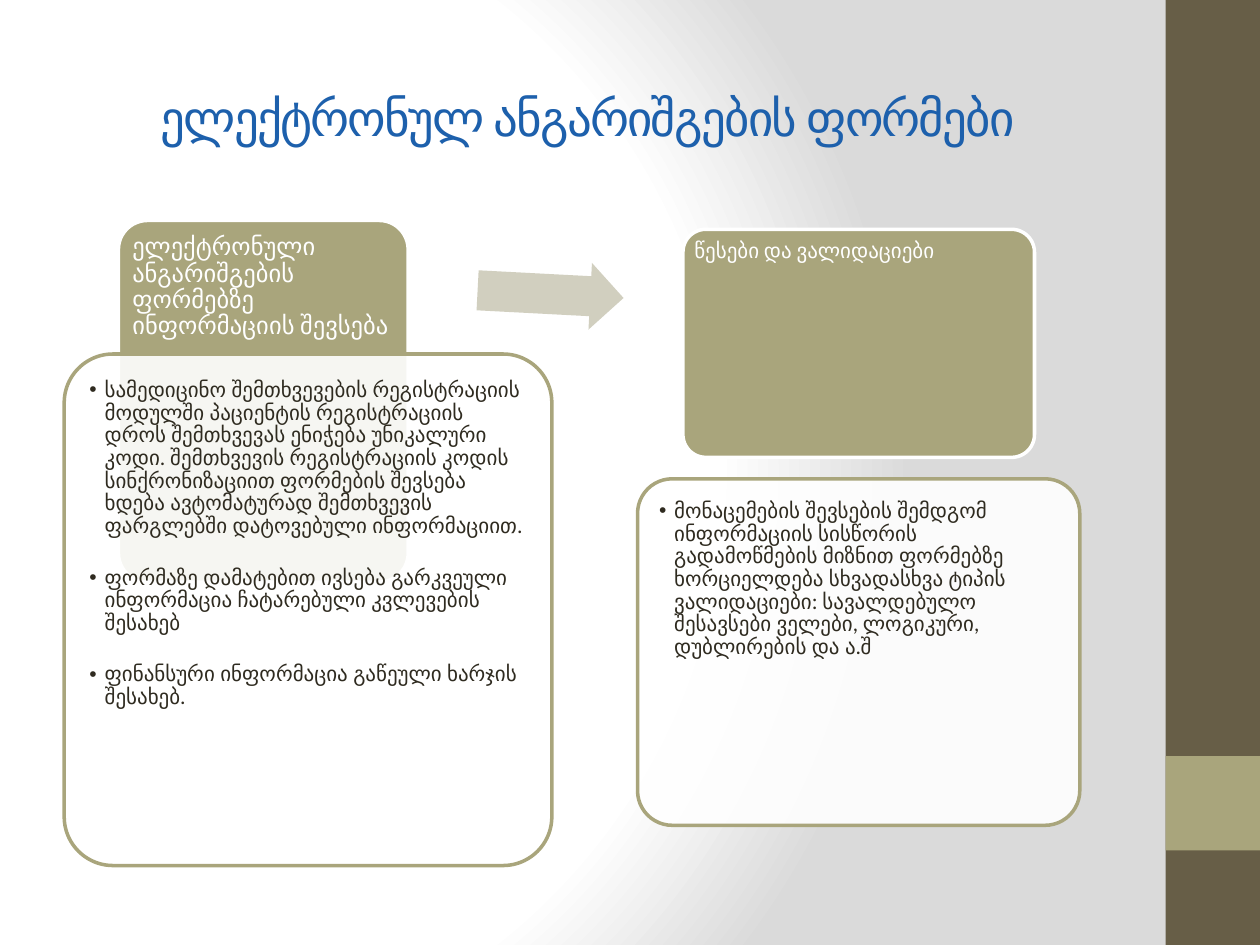
from pptx import Presentation
from pptx.dml.color import RGBColor
from pptx.enum.shapes import MSO_SHAPE
from pptx.enum.text import MSO_ANCHOR, MSO_AUTO_SIZE, PP_ALIGN
from pptx.oxml import parse_xml
from pptx.oxml.ns import nsdecls, qn
from pptx.util import Inches, Pt

RECT = MSO_SHAPE.RECTANGLE
ROUND = MSO_SHAPE.ROUNDED_RECTANGLE
ARROW = MSO_SHAPE.RIGHT_ARROW
TOP, MID = MSO_ANCHOR.TOP, MSO_ANCHOR.MIDDLE
LEFT, CENTER = PP_ALIGN.LEFT, PP_ALIGN.CENTER
NO_FIT = MSO_AUTO_SIZE.NONE

HUES = {
    "white": "FFFFFF", "grey": "DADADA", "brown": "675E47", "olive": "A9A57C",
    "pale": "D1CFBF", "blue": "1D60AC", "ink": "2F2B20",
}

LEFT_LIST = [
    "სამედიცინო შემთხვევების რეგისტრაციის მოდულში პაციენტის რეგისტრაციის დროს "
    "შემთხვევას ენიჭება უნიკალური კოდი. შემთხვევის რეგისტრაციის კოდის "
    "სინქრონიზაციით ფორმების შევსება ხდება ავტომატურად შემთხვევის ფარგლებში "
    "დატოვებული ინფორმაციით.",
    "ფორმაზე დამატებით ივსება გარკვეული ინფორმაცია ჩატარებული კვლევების შესახებ",
    "ფინანსური ინფორმაცია გაწეული ხარჯის შესახებ.",
]
RIGHT_LIST = [
    "მონაცემების შევსების შემდგომ ინფორმაციის სისწორის გადამოწმების მიზნით "
    "ფორმებზე ხორციელდება სხვადასხვა ტიპის ვალიდაციები: სავალდებულო შესავსები "
    "ველები, ლოგიკური, დუბლირების და ა.შ",
]


def rgb(name):
    return RGBColor.from_string(HUES[name])


def paint(slide):
    slide.background.fill.gradient()
    old = slide.element.find(".//" + qn("a:gradFill"))
    stops = "".join(
        f'<a:gs pos="{pos * 1000}"><a:srgbClr val="{HUES[hue]}"/></a:gs>'
        for pos, hue in ((0, "white"), (75, "white"), (100, "grey"))
    )
    new = parse_xml(
        f'<a:gradFill {nsdecls("a")} rotWithShape="1"><a:gsLst>{stops}</a:gsLst>'
        '<a:path path="circle">'
        '<a:fillToRect l="20000" t="50000" r="100000" b="50000"/>'
        "</a:path></a:gradFill>"
    )
    old.getparent().replace(old, new)


def place(item, box):
    item.left, item.top, item.width, item.height = map(Inches, box)


def add_box(slide, kind, box, fill, line=None, adj=(), alpha=None, turn=0):
    shape = slide.shapes.add_shape(kind, *map(Inches, box))
    shape.shadow.inherit = False
    shape.rotation = turn
    shape.fill.solid()
    shape.fill.fore_color.rgb = rgb(fill)
    if alpha:
        hue = shape.element.spPr.find(".//" + qn("a:srgbClr"))
        hue.append(parse_xml(f'<a:alpha {nsdecls("a")} val="{alpha * 1000}"/>'))
    if line:
        shape.line.color.rgb = rgb(line)
        shape.line.width = Pt(2)
    else:
        shape.line.fill.background()
    for i, value in enumerate(adj):
        shape.adjustments[i] = value


def set_text(item, texts, size, font, hue, align=LEFT, anchor=TOP,
             pads=(0.09, 0.09, 0.09, 0.09), lead=0.9, gap=0, track=0, dots=False):
    frame = item.text_frame
    frame.word_wrap = True
    frame.auto_size = NO_FIT
    frame.vertical_anchor = anchor
    (frame.margin_left, frame.margin_top,
     frame.margin_right, frame.margin_bottom) = map(Inches, pads)
    for i, text in enumerate(texts):
        para = frame.paragraphs[0] if i == 0 else frame.add_paragraph()
        para.alignment = align
        para.line_spacing = lead
        para.space_before = Pt(0)
        para.space_after = Pt(gap)
        if dots:
            props = para._p.get_or_add_pPr()
            props.set("marL", str(Inches(0.12)))
            props.set("indent", str(-Inches(0.12)))
            props.append(parse_xml(f'<a:buChar {nsdecls("a")} char="•"/>'))
        run = para.add_run()
        run.text = text
        run.font.size = Pt(size)
        run.font.name = font
        run.font.color.rgb = rgb(hue)
        if track:
            run._r.get_or_add_rPr().set("spc", str(track * 100))


def add_head(slide, box, high, text, size, pads):
    add_box(slide, ROUND, box, "olive", line="white", adj=[0.1])
    label = slide.shapes.add_textbox(*map(Inches, (*box[:3], high)))
    set_text(label, [text], size, "Calibri", "white", pads=pads)


def add_list(slide, body, box, inset, texts):
    add_box(slide, ROUND, box, "white", line="olive", adj=[0.1], alpha=90)
    x, y, w, h = box
    place(body, (x + inset, y + inset, w - 2 * inset, h - 2 * inset))
    set_text(body, texts, 12, "Lato", "ink", gap=16.5, dots=True)
    slide.shapes.element.append(body.element)


def main():
    deck = Presentation()
    deck.slide_width, deck.slide_height = Inches(10), Inches(7.5)
    slide = deck.slides.add_slide(deck.slide_layouts[3])
    title, first, second = slide.placeholders
    paint(slide)
    add_box(slide, RECT, (9.25, 0, 0.75, 7.5), "brown")
    add_box(slide, RECT, (9.25, 6, 0.75, 0.75), "olive")

    place(title, (0.5, 0.3, 8.33, 1.25))
    set_text(title, ["ელექტრონულ ანგარიშგების ფორმები"], 28, "Lato", "blue",
             align=CENTER, anchor=MID, pads=(0.1, 0.05, 0.1, 0.05), lead=1, track=-1)

    add_head(slide, (0.94, 1.75, 2.3, 2.87), 0.92,
             "ელექტრონული ანგარიშგების ფორმებზე ინფორმაციის შევსება",
             14, (0.11, 0.11, 0.11, 0.06))
    add_list(slide, first, (0.51, 2.81, 3.87, 4.06), 0.11, LEFT_LIST)
    add_box(slide, ARROW, (3.79, 2.07, 1.16, 0.53), "pale", adj=[0.6, 0.5], turn=3)
    add_head(slide, (5.42, 1.82, 2.79, 1.81), 0.63, "წესები და ვალიდაციები",
             12, (0.09, 0.09, 0.09, 0.05))
    add_list(slide, second, (5.06, 3.8, 3.51, 2.75), 0.08, RIGHT_LIST)
    deck.save("out.pptx")


if __name__ == "__main__":
    main()
